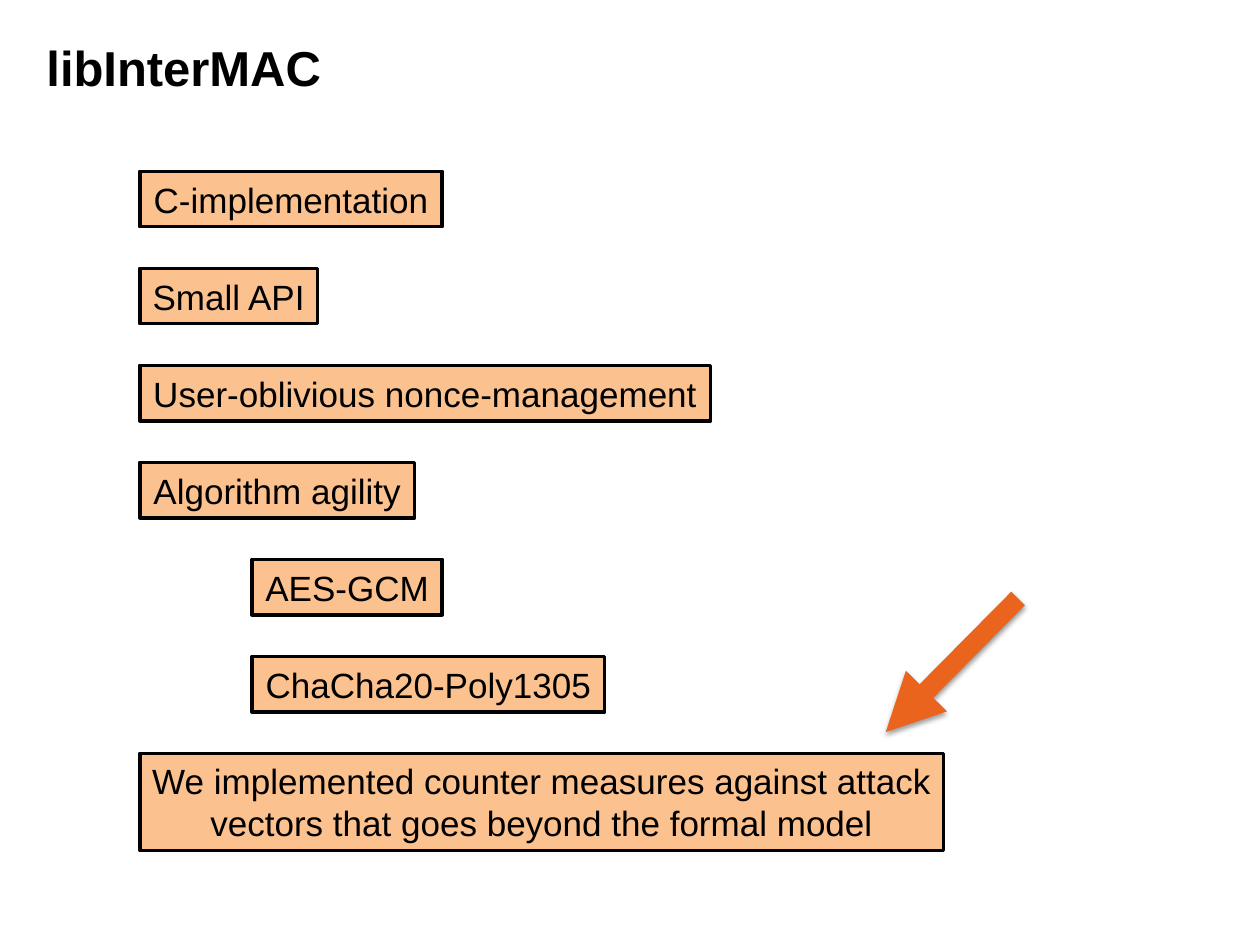
from lxml import etree
from pptx import Presentation
from pptx.dml.color import RGBColor
from pptx.enum.shapes import MSO_CONNECTOR, MSO_SHAPE
from pptx.enum.text import MSO_ANCHOR, MSO_AUTO_SIZE, PP_ALIGN
from pptx.oxml.ns import qn
from pptx.util import Inches, Pt

COLORS = {"text": "000000", "box": "FBC18F", "border": "000000",
          "arrow": "EB641E", "shadow": "000000"}
ROW_STEP = 0.77
BOX_HEIGHT = 0.44
INDENT = 0.89

# text, indent level, width, number of lines
FEATURES = [
    ("C-implementation", 0, 2.4, 1),
    ("Small API", 0, 1.41, 1),
    ("User-oblivious nonce-management", 0, 4.53, 1),
    ("Algorithm agility", 0, 2.18, 1),
    ("AES-GCM", 1, 1.51, 1),
    ("ChaCha20-Poly1305", 1, 2.8, 1),
    ("We implemented counter measures against attack vectors "
     "that goes beyond the formal model", 0, 6.38, 2),
]


def color(name):
    return RGBColor.from_string(COLORS[name])


def write_text(shape, text, size=20, bold=False, align=PP_ALIGN.LEFT,
               anchor=MSO_ANCHOR.TOP, wrap=False):
    frame = shape.text_frame
    frame.word_wrap = wrap
    frame.auto_size = MSO_AUTO_SIZE.SHAPE_TO_FIT_TEXT
    frame.vertical_anchor = anchor
    paragraph = frame.paragraphs[0]
    paragraph.alignment = align
    run = paragraph.add_run()
    run.text = text
    run.font.name = "Arial"
    run.font.size = Pt(size)
    run.font.bold = bold
    run.font.color.rgb = color("text")


def add_title(slide, left, top, width, height):
    title = slide.shapes.add_textbox(
        Inches(left), Inches(top), Inches(width), Inches(height))
    write_text(title, "libInterMAC", size=28, bold=True)


def add_feature_box(slide, text, left, top, width, lines):
    height = BOX_HEIGHT + (lines - 1) * 0.33
    box = slide.shapes.add_shape(
        MSO_SHAPE.RECTANGLE,
        Inches(left), Inches(top), Inches(width), Inches(height))
    box.shadow.inherit = False
    box.fill.solid()
    box.fill.fore_color.rgb = color("box")
    box.line.color.rgb = color("border")
    box.line.width = Pt(2)
    write_text(box, text, align=PP_ALIGN.CENTER, anchor=MSO_ANCHOR.MIDDLE,
               wrap=lines > 1)


def add_feature_list(slide, left, top):
    for row, (text, level, width, lines) in enumerate(FEATURES):
        add_feature_box(slide, text, left + level * INDENT,
                        top + row * ROW_STEP, width, lines)


def add_soft_shadow(shape_properties):
    effects = etree.SubElement(shape_properties, qn("a:effectLst"))
    shadow = etree.SubElement(
        effects, qn("a:outerShdw"), blurRad=str(Pt(3.1)), dist=str(Pt(1.6)),
        dir=str(90 * 60000), rotWithShape="0")
    tint = etree.SubElement(shadow, qn("a:srgbClr"), val=COLORS["shadow"])
    etree.SubElement(tint, qn("a:alpha"), val="38000")


def add_pointer(slide, start, end):
    """Thick arrow from start to end, with a head at the end."""
    pointer = slide.shapes.add_connector(
        MSO_CONNECTOR.STRAIGHT, *(Inches(v) for v in (*start, *end)))
    pointer.line.color.rgb = color("arrow")
    pointer.line.width = Pt(11)
    properties = pointer.element.spPr
    etree.SubElement(properties.find(qn("a:ln")), qn("a:tailEnd"),
                     type="triangle")
    add_soft_shadow(properties)


def main():
    deck = Presentation()
    deck.slide_width, deck.slide_height = Inches(10), Inches(7.5)
    slide = deck.slides.add_slide(deck.slide_layouts[6])
    add_title(slide, 0.27, 0.25, 2.41, 0.57)
    add_feature_list(slide, 1.11, 1.36)
    add_pointer(slide, (8.08, 4.75), (7.03, 5.81))
    deck.save("out.pptx")


if __name__ == "__main__":
    main()
